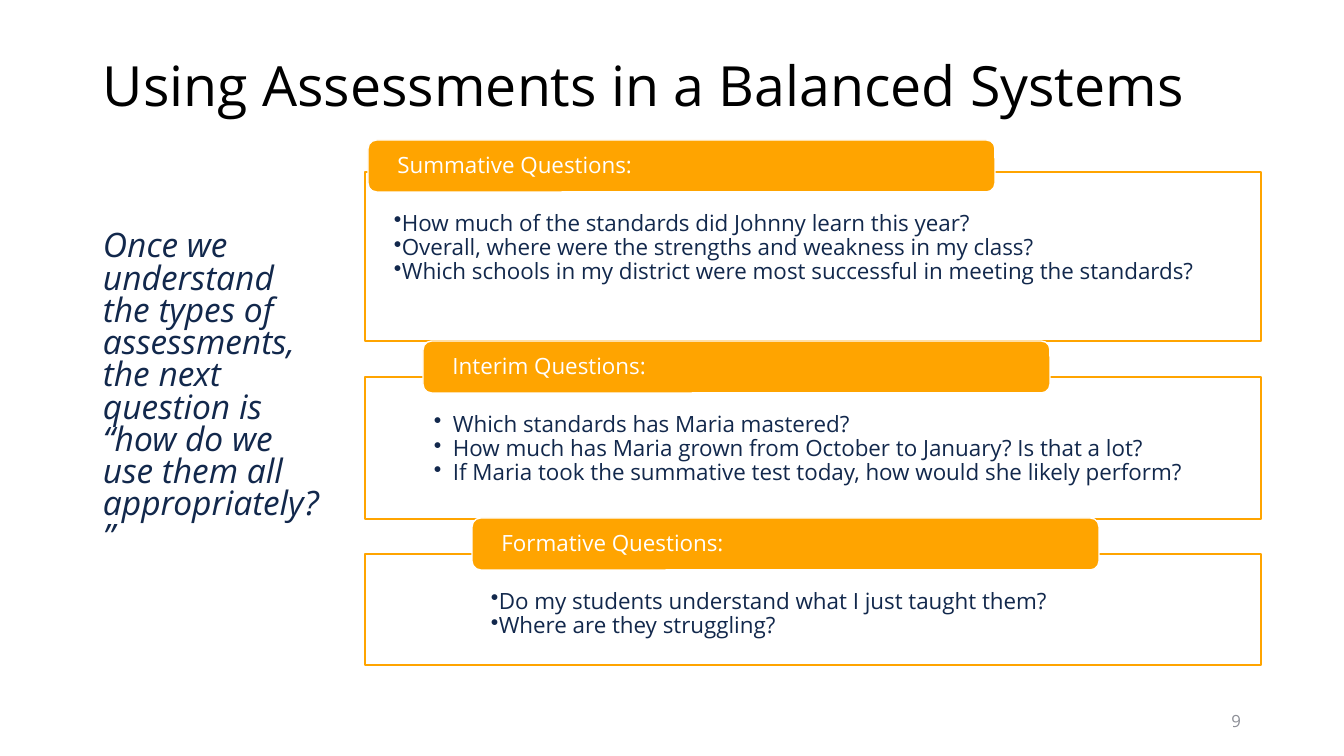
import pptx
import pptx.dml.color
import pptx.enum.shapes
import pptx.enum.text
import pptx.oxml
import pptx.oxml.ns
import pptx.util

EMU_PER_PX = 914400 / 100.8
FONT = "Open Sans"
COLORS = {
    "title": "000000",
    "navy": "12284C",
    "orange": "FFA400",
    "white": "FFFFFF",
    "gray": "8C8E96",
}
ALIGN = pptx.enum.text.PP_ALIGN
ANCHOR = pptx.enum.text.MSO_ANCHOR
SHAPE = pptx.enum.shapes.MSO_SHAPE
TAB_WIDTH, TAB_HEIGHT = 627, 52

# panel box, tab offset from the panel, text insets, hanging indent
PANELS = [
    {
        "heading": "Summative Questions:",
        "questions": [
            "How much of the standards did Johnny learn this year?",
            "Overall, where were the strengths and weakness in my class?",
            "Which schools in my district were most successful in meeting the standards?",
        ],
        "box": (365, 172, 896, 169),
        "tab_offset": (3, -32),
        "insets": (29, 40, 10, 10),
        "hanging": 0,
    },
    {
        "heading": "Interim Questions:",
        "questions": [
            "Which standards has Maria mastered?",
            "How much has Maria grown from October to January? Is that a lot?",
            "If Maria took the summative test today, how would she likely perform?",
        ],
        "box": (365, 377, 896, 142),
        "tab_offset": (58, -36),
        "insets": (69, 36, 69, 12),
        "hanging": 19,
    },
    {
        "heading": "Formative Questions:",
        "questions": [
            "Do my students understand what I just taught them?",
            "Where are they struggling?",
        ],
        "box": (365, 554, 896, 111),
        "tab_offset": (107, -36),
        "insets": (126, 36, 69, 12),
        "hanging": 0,
    },
]


def px(length):
    return pptx.util.Emu(round(length * EMU_PER_PX))


def color(name):
    return pptx.dml.color.RGBColor.from_string(COLORS[name])


def add_bullet(paragraph, hanging):
    properties = paragraph._p.get_or_add_pPr()
    properties.set("marL", str(px(hanging)))
    properties.set("indent", str(-px(hanging)))
    bullet = pptx.oxml.parse_xml(
        f'<a:buChar {pptx.oxml.ns.nsdecls("a")} char="•"/>')
    properties.append(bullet)


def write_text(shape, lines, size, color_name, insets=(10, 5, 10, 5),
               anchor=ANCHOR.TOP, align=ALIGN.LEFT, spacing=0.9,
               italic=False, hanging=None):
    """Fill a shape with paragraphs; a hanging indent makes them bullets."""
    frame = shape.text_frame
    frame.word_wrap = True
    frame.vertical_anchor = anchor
    (frame.margin_left, frame.margin_top,
     frame.margin_right, frame.margin_bottom) = map(px, insets)
    for index, line in enumerate(lines):
        paragraph = frame.add_paragraph() if index else frame.paragraphs[0]
        paragraph.text = line
        paragraph.alignment = align
        paragraph.line_spacing = spacing
        if hanging is not None:
            add_bullet(paragraph, hanging)
        paragraph.font.name = FONT
        paragraph.font.size = pptx.util.Pt(size)
        paragraph.font.italic = italic
        paragraph.font.color.rgb = color(color_name)


def add_text(slide, box, text, size, color_name, **options):
    shape = slide.shapes.add_textbox(*map(px, box))
    write_text(shape, [text], size, color_name, **options)


def add_box(slide, kind, box, fill, line):
    shape = slide.shapes.add_shape(kind, *map(px, box))
    shape.shadow.inherit = False
    shape.fill.solid()
    shape.fill.fore_color.rgb = color(fill)
    shape.line.color.rgb = color(line)
    shape.line.width = pptx.util.Pt(1)
    return shape


def set_opacity(shape, percent):
    fill_color = shape._element.spPr.find(
        f'{pptx.oxml.ns.qn("a:solidFill")}/{pptx.oxml.ns.qn("a:srgbClr")}')
    fill_color.append(pptx.oxml.parse_xml(
        f'<a:alpha {pptx.oxml.ns.nsdecls("a")} val="{percent * 1000}"/>'))


def add_question_panel(slide, box, heading, questions, tab_offset, insets, hanging):
    """Draw a framed question list with its heading tab over the top edge."""
    panel = add_box(slide, SHAPE.RECTANGLE, box, "white", "orange")
    set_opacity(panel, 90)
    write_text(panel, questions, 16, "navy", insets=insets, hanging=hanging)

    tab_box = (box[0] + tab_offset[0], box[1] + tab_offset[1], TAB_WIDTH, TAB_HEIGHT)
    tab = add_box(slide, SHAPE.ROUNDED_RECTANGLE, tab_box, "orange", "white")
    write_text(tab, [heading], 16, "white", insets=(27, 0, 27, 0),
               anchor=ANCHOR.MIDDLE)


def build_assessment_slide(presentation):
    slide = presentation.slides.add_slide(presentation.slide_layouts[6])
    add_text(slide, (93, 50, 1159, 111), "Using Assessments in a Balanced Systems",
             39.6, "title", insets=(10, 0, 10, 43), anchor=ANCHOR.BOTTOM)
    add_text(slide, (93, 227, 245, 420),
             "Once we understand the types of assessments, the next question is "
             "“how do we use them all appropriately?”",
             24, "navy", spacing=0.8, italic=True)
    add_text(slide, (949, 701, 302, 40), "9", 12, "gray",
             anchor=ANCHOR.MIDDLE, align=ALIGN.RIGHT, spacing=1.0)
    for panel in PANELS:
        add_question_panel(slide, **panel)


def main():
    presentation = pptx.Presentation()
    presentation.slide_width = px(1344)
    presentation.slide_height = px(756)
    build_assessment_slide(presentation)
    presentation.save("out.pptx")


if __name__ == "__main__":
    main()
